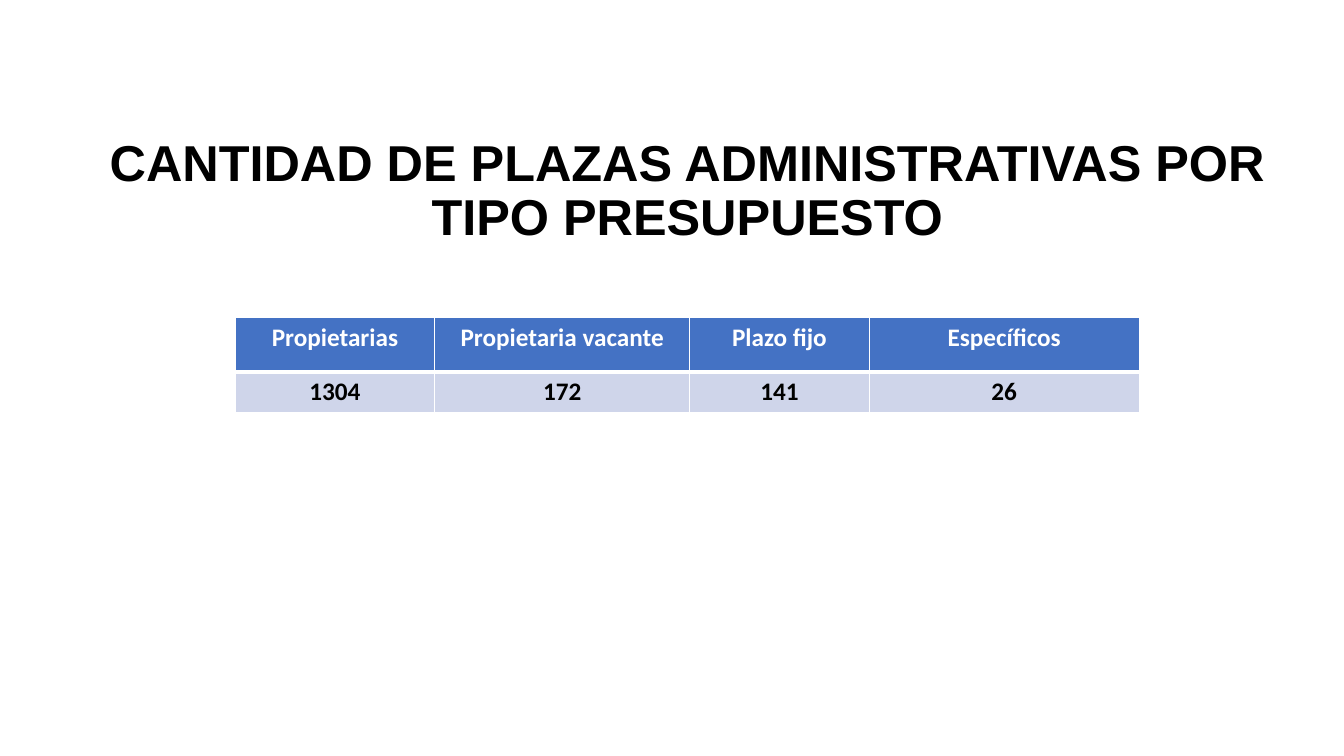
import dataclasses

import lxml.etree
import pptx
import pptx.dml.color
import pptx.enum.text
import pptx.oxml.ns
import pptx.util

COLORS = {"white": "FFFFFF", "black": "000000", "header": "4472C4", "band": "CFD5EA"}
SLIDE_WIDTH = pptx.util.Inches(13.33)
SLIDE_HEIGHT = pptx.util.Inches(7.5)
GRID_COLUMNS, GRID_ROWS = 160, 90
TITLE = "CANTIDAD DE PLAZAS ADMINISTRATIVAS POR TIPO PRESUPUESTO"
TITLE_FORMAT = {"name": "Arial", "size": pptx.util.Pt(36), "bold": True}
CELL_FORMAT = {"name": "Calibri", "size": pptx.util.Pt(18), "bold": True}


@dataclasses.dataclass(frozen=True)
class Budget:
    kind: str
    positions: int
    columns: float


@dataclasses.dataclass(frozen=True)
class Band:
    rows: float
    fill: str
    ink: str
    borders: dict[str, int]


BUDGETS = [
    Budget("Propietarias", 1304, 23.76),
    Budget("Propietaria vacante", 172, 30.36),
    Budget("Plazo fijo", 141, 21.36),
    Budget("Específicos", 26, 32.16),
]
BANDS = [
    Band(6.48, "header", "white", {"lnL": 1, "lnR": 1, "lnT": 1, "lnB": 3}),
    Band(4.44, "band", "black", {"lnL": 1, "lnR": 1, "lnT": 3, "lnB": 1}),
]


def across(columns: float) -> int:
    return round(SLIDE_WIDTH * columns / GRID_COLUMNS)


def down(rows: float) -> int:
    return round(SLIDE_HEIGHT * rows / GRID_ROWS)


def rgb(color: str) -> pptx.dml.color.RGBColor:
    return pptx.dml.color.RGBColor.from_string(COLORS[color])


def write(paragraph, words: str, style: dict, ink: str) -> None:
    paragraph.alignment = pptx.enum.text.PP_ALIGN.CENTER
    run = paragraph.add_run()
    run.text = words
    for attribute, value in style.items():
        setattr(run.font, attribute, value)
    run.font.color.rgb = rgb(ink)


def add_title(slide) -> None:
    heading = slide.shapes.add_textbox(across(9), down(15.36), across(145.7), down(15))
    frame = heading.text_frame
    frame.word_wrap = True
    frame.vertical_anchor = pptx.enum.text.MSO_ANCHOR.MIDDLE
    frame.paragraphs[0].line_spacing = 0.9
    write(frame.paragraphs[0], TITLE, TITLE_FORMAT, "black")


def format_cell(cell, words: str, band: Band) -> None:
    qn = pptx.oxml.ns.qn
    properties = cell._tc.get_or_add_tcPr()
    for side, points in band.borders.items():
        border = lxml.etree.SubElement(
            properties, qn(f"a:{side}"), w=str(pptx.util.Pt(points))
        )
        paint = lxml.etree.SubElement(border, qn("a:solidFill"))
        lxml.etree.SubElement(paint, qn("a:srgbClr"), val=COLORS["white"])
    cell.fill.solid()
    cell.fill.fore_color.rgb = rgb(band.fill)
    write(cell.text_frame.paragraphs[0], words, CELL_FORMAT, band.ink)


def add_budget_table(slide) -> None:
    width = across(sum(budget.columns for budget in BUDGETS))
    height = down(sum(band.rows for band in BANDS))
    budget_table = slide.shapes.add_table(
        len(BANDS), len(BUDGETS), across(28), down(37.8), width, height
    ).table
    for row, band in enumerate(BANDS):
        budget_table.rows[row].height = down(band.rows)
    for column, budget in enumerate(BUDGETS):
        budget_table.columns[column].width = across(budget.columns)
        for row, words in enumerate((budget.kind, str(budget.positions))):
            format_cell(budget_table.cell(row, column), words, BANDS[row])


def main() -> None:
    deck = pptx.Presentation()
    deck.slide_width = SLIDE_WIDTH
    deck.slide_height = SLIDE_HEIGHT
    slide = deck.slides.add_slide(deck.slide_layouts[6])
    add_title(slide)
    add_budget_table(slide)
    deck.save("out.pptx")


if __name__ == "__main__":
    main()
